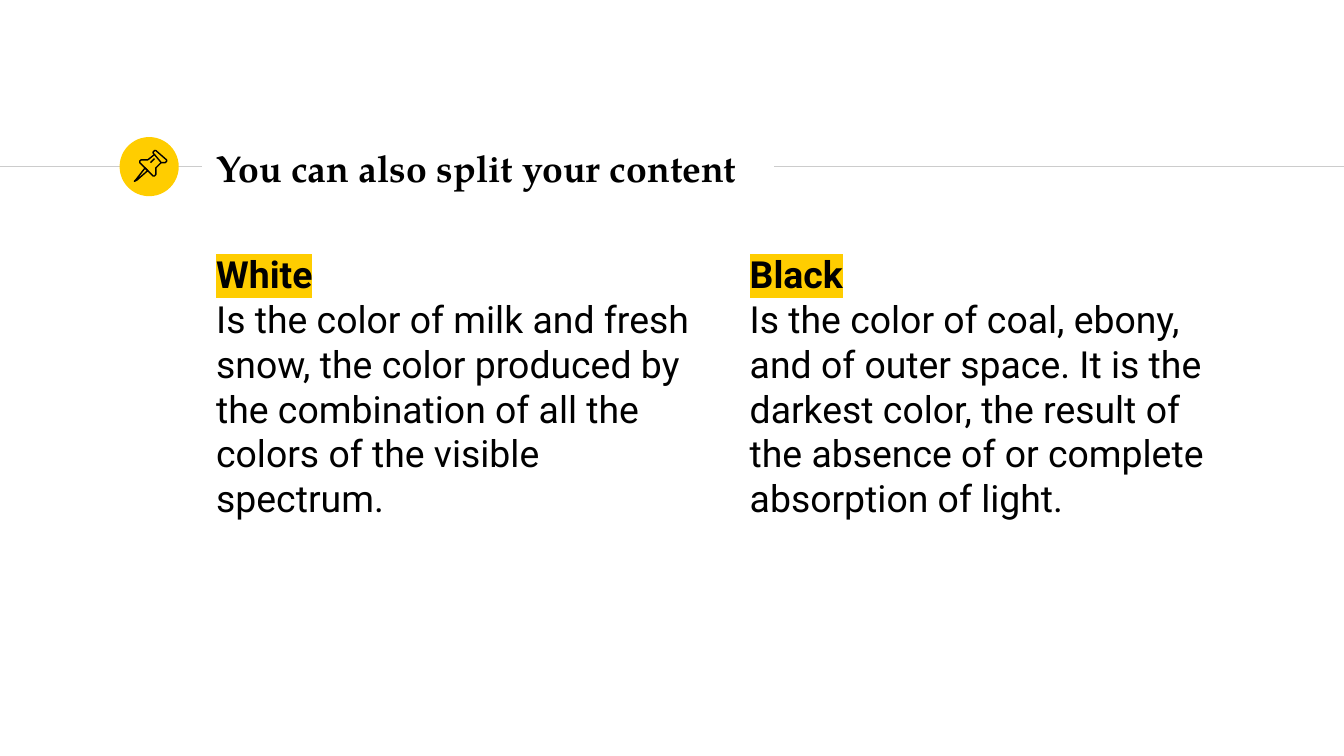
"""Build a slide that splits its content into two columns."""
from dataclasses import dataclass

from lxml import etree
from pptx import Presentation
from pptx import util as u
from pptx.dml.color import RGBColor
from pptx.enum import shapes, text
from pptx.oxml.ns import qn

CELL = u.Inches(0.01)
COLUMNS = 1000
RULE_ROW = 124
YELLOW, BLACK, GREY = "FFCD00", "000000", "CCCCCC"
SERIF, SANS = "TeX Gyre Pagella", "Roboto"


@dataclass(frozen=True)
class Box:
    """A rectangle in grid cells."""
    column: int
    row: int
    width: int
    height: int

    def lengths(self) -> list[int]:
        """Return left, top, width and height as lengths."""
        return [cells * CELL for cells in (self.column, self.row, self.width, self.height)]


@dataclass(frozen=True)
class Line:
    """One paragraph and its look."""
    wording: str
    face: str = SANS
    bold: bool = False
    highlight: str = ""


@dataclass(frozen=True)
class Topic:
    """A heading and its explanation, starting at a grid column."""
    column: int
    heading: str
    explanation: str


@dataclass(frozen=True)
class Stroke:
    """One outline of the pin, in grid cells."""
    points: tuple[tuple[int, int], ...]
    closed: bool = False


TOPICS = (
    Topic(151, "White", "Is the color of milk and fresh snow, the color produced by "
          "the combination of all the colors of the visible spectrum."),
    Topic(548, "Black", "Is the color of coal, ebony, and of outer space. It is the darkest "
          "color, the result of the absence of or complete absorption of light."),
)
PIN = (
    Stroke(((108, 125), (101, 134), (100, 135), (102, 134), (110, 127)), True),
    Stroke(((115, 115), (120, 121), (121, 121), (123, 121), (124, 120), (124, 119),
            (116, 112), (115, 112), (114, 113), (114, 114)), True),
    Stroke(((115, 115), (110, 119), (109, 119), (107, 119), (105, 119), (104, 120),
            (104, 121), (114, 131), (115, 131), (116, 130), (116, 128), (116, 125),
            (120, 121))),
    Stroke(((112, 121), (115, 118))),
)


def colour(code: str) -> RGBColor:
    """Turn a hex string into a colour."""
    return RGBColor.from_string(code)


def draw_rule(slide, start: int, end: int) -> None:
    """Draw a thin rule between two grid columns."""
    rule = slide.shapes.add_connector(
        shapes.MSO_CONNECTOR.STRAIGHT,
        start * CELL, RULE_ROW * CELL, end * CELL, RULE_ROW * CELL)
    rule.line.color.rgb = colour(GREY)
    rule.line.width = u.Pt(0.75)
    etree.SubElement(rule._element.spPr, qn("a:effectLst"))


def draw_disc(slide, box: Box) -> None:
    """Draw the yellow disc behind the pin."""
    disc = slide.shapes.add_shape(shapes.MSO_SHAPE.OVAL, *box.lengths())
    disc.shadow.inherit = False
    disc.fill.solid()
    disc.fill.fore_color.rgb = colour(YELLOW)
    disc.line.fill.background()


def draw_pin(slide, strokes: tuple[Stroke, ...]) -> None:
    """Draw the pin as a group of outlines."""
    pin = slide.shapes.add_group_shape()
    for stroke in strokes:
        builder = pin.shapes.build_freeform(*stroke.points[0], scale=CELL)
        builder.add_line_segments(stroke.points[1:], close=stroke.closed)
        outline = builder.convert_to_shape()
        outline.shadow.inherit = False
        outline.fill.background()
        outline.line.color.rgb = colour(BLACK)
        outline.line.width = u.Pt(0.75)


def write(slide, box: Box, lines: list[Line], anchor=text.MSO_ANCHOR.TOP) -> None:
    """Write paragraphs into a text box."""
    frame = slide.shapes.add_textbox(*box.lengths()).text_frame
    layout = {"word_wrap": True, "vertical_anchor": anchor}
    layout.update({f"margin_{side}": u.Inches(0.1)
                   for side in ("left", "top", "right", "bottom")})
    for name, value in layout.items():
        setattr(frame, name, value)
    for index, line in enumerate(lines):
        paragraph = frame.add_paragraph() if index else frame.paragraphs[0]
        run = paragraph.add_run()
        run.text = line.wording
        for name, value in {"name": line.face, "size": u.Pt(20), "bold": line.bold}.items():
            setattr(run.font, name, value)
        run.font.color.rgb = colour(BLACK)
        if line.highlight:
            marker = etree.Element(qn("a:highlight"))
            etree.SubElement(marker, qn("a:srgbClr"), val=line.highlight)
            run._r.rPr.find(qn("a:solidFill")).addnext(marker)


def main() -> None:
    """Compose and save the slide."""
    deck = Presentation()
    deck.slide_width = COLUMNS * CELL
    deck.slide_height = deck.slide_width * 9 // 16
    slide = deck.slides.add_slide(deck.slide_layouts[6])
    draw_rule(slide, 0, 150)
    draw_disc(slide, Box(89, 102, 44, 44))
    draw_rule(slide, 576, COLUMNS)
    write(slide, Box(151, 101, 424, 48),
          [Line("You can also split your content", SERIF, True)], text.MSO_ANCHOR.MIDDLE)
    for topic in TOPICS:
        write(slide, Box(topic.column, 177, 375, 353),
              [Line(topic.heading, bold=True, highlight=YELLOW), Line(topic.explanation)])
    draw_pin(slide, PIN)
    deck.save("out.pptx")


if __name__ == "__main__":
    main()
